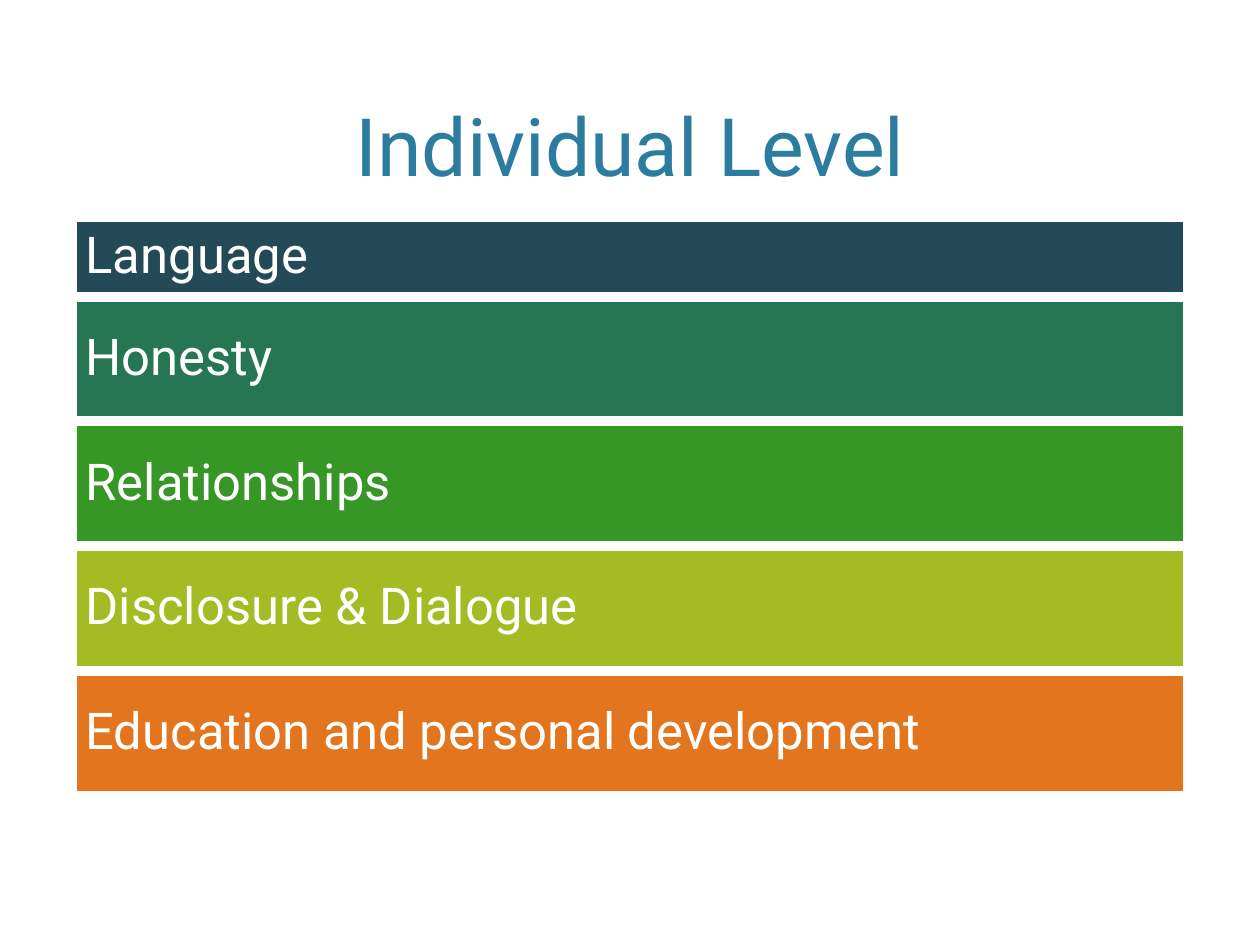
from dataclasses import dataclass

from pptx import Presentation
from pptx.dml.color import RGBColor
from pptx.enum.shapes import MSO_SHAPE
from pptx.enum.text import MSO_ANCHOR, PP_ALIGN
from pptx.util import Inches, Pt

RECT = MSO_SHAPE.RECTANGLE
MIDDLE, BOTTOM = MSO_ANCHOR.MIDDLE, MSO_ANCHOR.BOTTOM
LEFT, CENTER = PP_ALIGN.LEFT, PP_ALIGN.CENTER

FONT = "Roboto"
WHITE = "FFFFFF"
MARGIN, WIDTH = 0.6, 8.8
BARS_TOP, GAP, INSET = 1.75, 0.05, 0.08


@dataclass
class Bar:
    text: str
    fill: str
    height: float = 0.94


BARS = [
    Bar("Language", "244A58", 0.58),
    Bar("Honesty", "277653"),
    Bar("Relationships", "369726"),
    Bar("Disclosure & Dialogue", "A4BB23"),
    Bar("Education and personal development", "E2751D"),
]


def rgb(color: str) -> RGBColor:
    return RGBColor.from_string(color)


def write(sp, text: str, size: float, color: str, align, anchor) -> None:
    tf = sp.text_frame
    tf.text = text
    tf.word_wrap = True
    tf.vertical_anchor = anchor
    p = tf.paragraphs[0]
    p.alignment = align
    font = p.runs[0].font
    font.name, font.size = FONT, Pt(size)
    font.color.rgb = rgb(color)


def add_title(slide, text: str) -> None:
    sp = slide.shapes.title
    sp.left, sp.top = Inches(MARGIN), Inches(0.12)
    sp.width, sp.height = Inches(WIDTH), Inches(1.46)
    write(sp, text, 46, "2C7C9F", CENTER, BOTTOM)


def add_bar(slide, bar: Bar, top: float) -> None:
    sp = slide.shapes.add_shape(
        RECT, Inches(MARGIN), Inches(top), Inches(WIDTH), Inches(bar.height)
    )
    sp.shadow.inherit = False
    sp.fill.solid()
    sp.fill.fore_color.rgb = rgb(bar.fill)
    sp.line.color.rgb = rgb(WHITE)
    sp.line.width = Pt(2)
    write(sp, bar.text, 29, WHITE, LEFT, MIDDLE)
    tf = sp.text_frame
    tf.margin_left = tf.margin_right = Inches(INSET)
    tf.margin_top = tf.margin_bottom = Inches(INSET)
    tf.paragraphs[0].line_spacing = 0.9


def main() -> None:
    prs = Presentation()
    prs.slide_width, prs.slide_height = Inches(10), Inches(7.5)
    slide = prs.slides.add_slide(prs.slide_layouts[5])
    add_title(slide, "Individual Level")
    top = BARS_TOP
    for bar in BARS:
        add_bar(slide, bar, top)
        top += bar.height + GAP
    prs.save("out.pptx")


if __name__ == "__main__":
    main()
